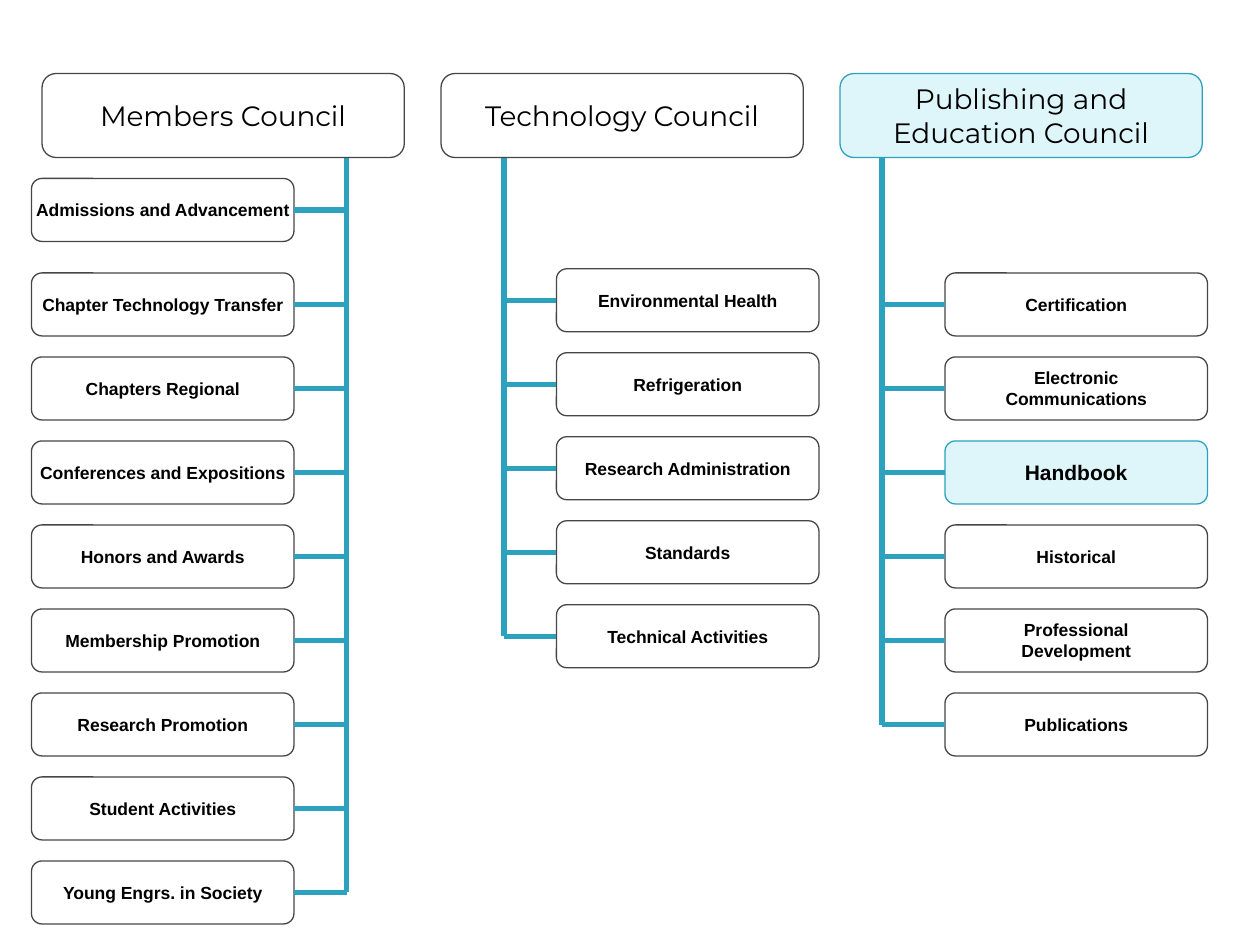
"""Build an organisation chart of three councils and their committees."""
import pptx
import pptx.dml.color
import pptx.enum.shapes
import pptx.enum.text
import pptx.oxml.ns
import pptx.util
from lxml import etree

COLORS = {"paper": "FFFFFF", "ink": "000000", "border": "464646",
          "accent": "2DA2BF", "highlight": "DEF5FA"}

COUNCILS = [
    {"name": "Members Council", "left": 4, "spine": 33, "card_left": 3, "side": 3,
     "first_row": 26, "lead": (17, "Admissions and Advancement"),
     "committees": ["Chapter Technology Transfer", "Chapters Regional",
                    "Conferences and Expositions", "Honors and Awards",
                    "Membership Promotion", "Research Promotion",
                    "Student Activities", "Young Engrs. in Society"]},
    {"name": "Technology Council", "left": 42, "spine": 48, "card_left": 53, "side": 1,
     "first_row": 25.6,
     "committees": ["Environmental Health", "Refrigeration", "Research Administration",
                    "Standards", "Technical Activities"]},
    {"name": "Publishing and\nEducation Council", "left": 80, "spine": 84,
     "card_left": 90, "side": 1, "first_row": 26,
     "committees": ["Certification", "Electronic\nCommunications", "Handbook",
                    "Historical", "Professional\nDevelopment", "Publications"]},
]
HIGHLIGHTED = {"Publishing and\nEducation Council", "Handbook"}

COLUMNS, ROWS = 120, 90
HEADER_TOP, HEADER_WIDTH, HEADER_HEIGHT = 7, 34.5, 8
CARD_WIDTH, CARD_HEIGHT, CARD_STEP = 25, 6, 8

deck = pptx.Presentation()
deck.slide_width = pptx.util.Inches(10)
deck.slide_height = pptx.util.Inches(7.5)
slide = deck.slides.add_slide(deck.slide_layouts[6])


def color(name):
    return pptx.dml.color.RGBColor.from_string(COLORS[name])


def across(columns):
    return round(deck.slide_width * columns / COLUMNS)


def down(rows):
    return round(deck.slide_height * rows / ROWS)


def add_box(label, left, top, width, height, font_name, size, bold):
    box = slide.shapes.add_shape(
        pptx.enum.shapes.MSO_SHAPE.ROUNDED_RECTANGLE,
        across(left), down(top), across(width), down(height))
    highlighted = label in HIGHLIGHTED
    box.shadow.inherit = False
    box.fill.solid()
    box.fill.fore_color.rgb = color("highlight" if highlighted else "paper")
    box.line.color.rgb = color("accent" if highlighted else "border")
    box.line.width = pptx.util.Pt(0.75)
    frame = box.text_frame
    frame.text = label
    frame.word_wrap = False
    frame.vertical_anchor = pptx.enum.text.MSO_ANCHOR.MIDDLE
    for paragraph in frame.paragraphs:
        paragraph.alignment = pptx.enum.text.PP_ALIGN.CENTER
        for run in paragraph.runs:
            run.font.name = font_name
            run.font.size = pptx.util.Pt(size)
            run.font.bold = bold
            run.font.color.rgb = color("ink")
    return box


def add_line(start_x, start_y, end_x, end_y):
    line = slide.shapes.add_connector(
        pptx.enum.shapes.MSO_CONNECTOR.STRAIGHT,
        across(start_x), down(start_y), across(end_x), down(end_y))
    line.line.color.rgb = color("accent")
    line.line.width = pptx.util.Pt(3)
    etree.SubElement(line._element.spPr, pptx.oxml.ns.qn("a:effectLst"))
    return line


def add_council(council):
    spine = council["spine"]
    cards = [(council["first_row"] + index * CARD_STEP, committee)
             for index, committee in enumerate(council["committees"])]
    if "lead" in council:
        cards.insert(0, council["lead"])
    last_middle = cards[-1][0] + CARD_HEIGHT / 2
    add_line(spine, HEADER_TOP + HEADER_HEIGHT, spine, last_middle)
    for top, committee in cards:
        size = 12 if committee in HIGHLIGHTED else 10
        card = add_box(committee, council["card_left"], top, CARD_WIDTH, CARD_HEIGHT,
                       "Arial", size, True)
        middle = top + CARD_HEIGHT / 2
        branch = add_line(spine, middle, council["card_left"], middle)
        branch.end_connect(card, council["side"])
    add_box(council["name"], council["left"], HEADER_TOP, HEADER_WIDTH, HEADER_HEIGHT,
            "Montserrat", 16, False)


for council in COUNCILS:
    add_council(council)

deck.save("out.pptx")
